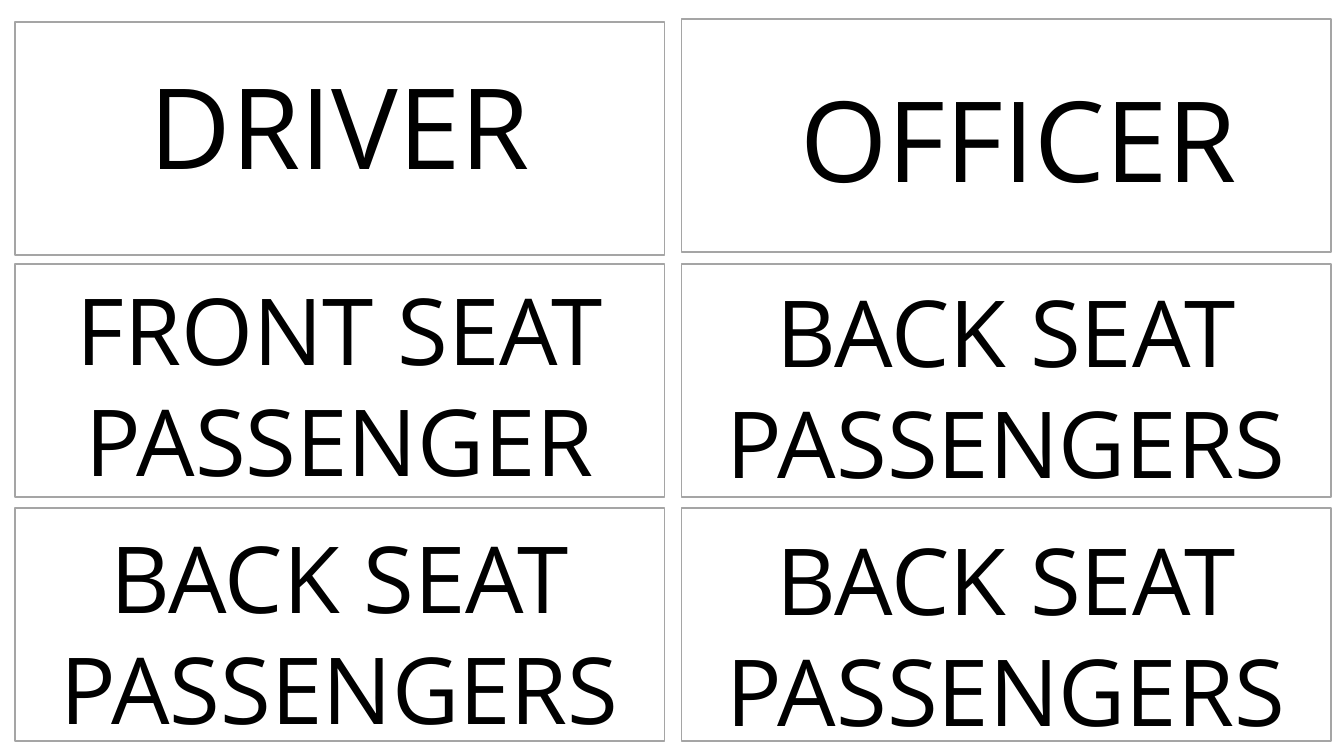
"""Build a slide of six seat signs for a vehicle."""
from pptx import Presentation
from pptx.dml.color import RGBColor
from pptx.enum.shapes import MSO_SHAPE
from pptx.enum.text import MSO_AUTO_SIZE, PP_ALIGN
from pptx.util import Emu, Pt

RECTANGLE = MSO_SHAPE.RECTANGLE
GROW = MSO_AUTO_SIZE.SHAPE_TO_FIT_TEXT
CENTER = PP_ALIGN.CENTER
WHITE = RGBColor(0xFF, 0xFF, 0xFF)
GREY = RGBColor(0xA5, 0xA5, 0xA5)
BLACK = RGBColor(0x00, 0x00, 0x00)
SCALE = 9144
CARD_WIDTH, CARD_HEIGHT = 644, 231
LEFT, RIGHT = 15, 676
BACK_SEAT = "BACK SEAT PASSENGERS"

CARDS = [(LEFT, 22), (LEFT, 262), (RIGHT, 19), (RIGHT, 262), (LEFT, 504), (RIGHT, 504)]
LABELS = [
    ("DRIVER", 26, 52, 622, 145, 80),
    ("OFFICER", 690, 65, 641, 145, 80),
    ("FRONT SEAT PASSENGER", 26, 266, 622, 232, 66),
    (BACK_SEAT, 26, 512, 622, 232, 66),
    (BACK_SEAT, 687, 268, 622, 300, 66),
    (BACK_SEAT, 687, 514, 622, 232, 66),
]


def px(*lengths):
    """Turn px lengths into EMU."""
    return [Emu(length * SCALE) for length in lengths]


class SignSlide:
    """Hold the sign style and the current slide."""

    font = "Open Sans"

    def __init__(self, deck):
        """Add a blank slide to the deck."""
        self.slide = deck.slides.add_slide(deck.slide_layouts[6])

    def card(self, left, top):
        """Draw the outlined card of one sign."""
        card = self.slide.shapes.add_shape(RECTANGLE, *px(left, top, CARD_WIDTH, CARD_HEIGHT))
        card.shadow.inherit = False
        card.fill.solid()
        card.fill.fore_color.rgb = WHITE
        card.line.color.rgb = GREY
        card.line.width = Pt(1)

    def label(self, text, left, top, width, height, size):
        """Write the centred wording of one sign."""
        box = self.slide.shapes.add_textbox(*px(left, top, width, height))
        frame = box.text_frame
        frame.word_wrap = True
        frame.auto_size = GROW
        frame.text = text
        para = frame.paragraphs[0]
        para.alignment = CENTER
        span = para.runs[0]
        span.font.name = self.font
        span.font.size = Pt(size)
        span.font.color.rgb = BLACK


def main():
    """Build and save the deck."""
    deck = Presentation()
    deck.slide_width, deck.slide_height = px(1333, 750)
    page = SignSlide(deck)
    for card in CARDS:
        page.card(*card)
    for label in LABELS:
        page.label(*label)
    deck.save("out.pptx")


if __name__ == "__main__":
    main()
